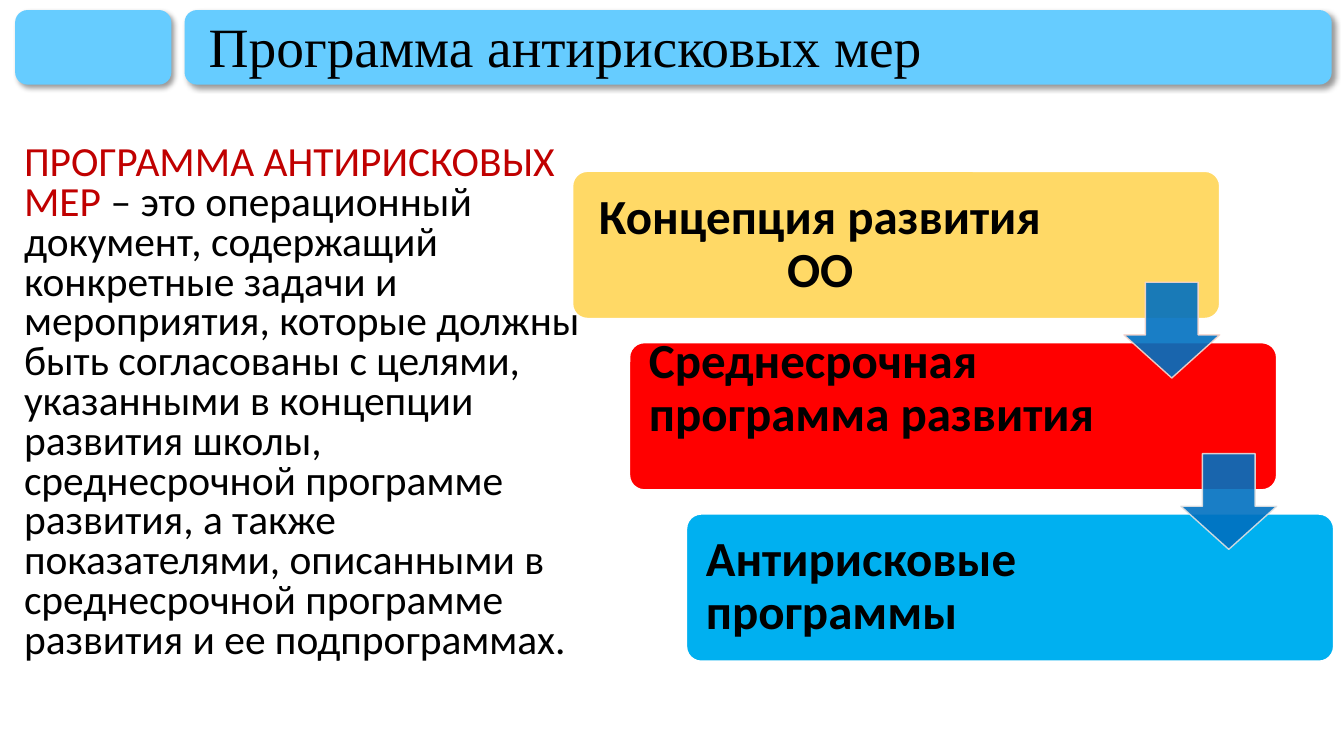
from dataclasses import dataclass

from lxml import etree
from pptx import Presentation
from pptx.dml.color import RGBColor
from pptx.enum.shapes import MSO_SHAPE
from pptx.enum.text import MSO_ANCHOR, MSO_AUTO_SIZE, PP_ALIGN
from pptx.oxml import parse_xml
from pptx.oxml.ns import nsdecls, qn
from pptx.util import Pt

ROUNDED = MSO_SHAPE.ROUNDED_RECTANGLE
DOWN_ARROW = MSO_SHAPE.DOWN_ARROW
LEFT, CENTER = PP_ALIGN.LEFT, PP_ALIGN.CENTER
TOP, MIDDLE = MSO_ANCHOR.TOP, MSO_ANCHOR.MIDDLE


@dataclass(frozen=True)
class Theme:
    header: str = "66CCFF"
    text: str = "000000"
    accent: str = "C00000"
    concept: str = "FFD966"
    program: str = "FF0000"
    antirisk: str = "00B0F0"
    card_line: str = "FFFFFF"
    arrow: str = "0070C0"
    arrow_lines: tuple = ("F8D7CE", "E1E1E1")
    title_font: str = "Times New Roman"
    body_font: str = "Calibri"
    title_size: float = 39.6
    body_size: float = 29.6
    card_size: float = 35


theme = Theme()


def add_block(kind, box, fill, line=None):
    """Add a filled preset shape without the default shadow."""
    shape = slide.shapes.add_shape(kind, *map(Pt, box))
    shape.shadow.inherit = False
    shape.fill.solid()
    shape.fill.fore_color.rgb = RGBColor.from_string(fill)
    if line:
        shape.line.color.rgb = RGBColor.from_string(line)
        shape.line.width = Pt(1)
    else:
        shape.line.fill.background()
    return shape


def write_text(shape, box, runs, size, font, spacing, anchor=MIDDLE, align=LEFT, bold=False):
    """Place a text shape and fill its paragraph with (text, colour) runs."""
    shape.left, shape.top, shape.width, shape.height = map(Pt, box)
    frame = shape.text_frame
    frame.word_wrap = True
    frame.auto_size = MSO_AUTO_SIZE.NONE
    frame.vertical_anchor = anchor
    paragraph = frame.paragraphs[0]
    paragraph.alignment = align
    paragraph.line_spacing = spacing
    for text, color in runs:
        run = paragraph.add_run()
        run.text = text
        run.font.size = Pt(size)
        run.font.name = font
        run.font.bold = bold
        run.font.color.rgb = RGBColor.from_string(color)


presentation = Presentation()
presentation.slide_width = Pt(960)
presentation.slide_height = Pt(540)
slide = presentation.slides.add_slide(presentation.slide_layouts[5])

# Header bars with a soft shadow
for left, width in ((131.8, 819.4), (10.8, 111.6)):
    bar = add_block(ROUNDED, (left, 7.2, width, 53.3), theme.header)
    effects = bar._element.spPr.find(qn("a:effectLst"))
    effects.append(parse_xml(
        f'<a:outerShdw {nsdecls("a")} blurRad="{Pt(4)}" dist="{Pt(3)}" dir="2700000" '
        'algn="tl" rotWithShape="0"><a:srgbClr val="000000">'
        '<a:alpha val="40000"/></a:srgbClr></a:outerShdw>'))

# Title, brought in front of the bars
title = slide.shapes.title
write_text(title, (141.8, 11.5, 799.2, 47.5), [("Программа антирисковых мер", theme.text)],
           theme.title_size, theme.title_font, 0.9)
slide.shapes._spTree.append(title._element)

# Definition
definition_box = (10.1, 100.1, 415.4, 421.2)
definition = slide.shapes.add_textbox(*map(Pt, definition_box))
write_text(definition, definition_box, [
    ("ПРОГРАММА АНТИРИСКОВЫХ МЕР ", theme.accent),
    ("– это операционный документ, содержащий конкретные задачи и мероприятия, "
     "которые должны быть согласованы с целями, указанными в концепции развития школы, "
     "среднесрочной программе развития, а также показателями, описанными в "
     "среднесрочной программе развития и ее подпрограммах.", theme.text),
], theme.body_size, theme.body_font, 0.8, anchor=TOP)

# Staircase of cards: text, fill, alignment, upward shift of the text
cards = (
    ("Концепция развития ОО", theme.concept, CENTER, 0),
    ("Среднесрочная программа развития", theme.program, LEFT, 19),
    ("Антирисковые программы", theme.antirisk, LEFT, 0),
)
card_left, card_top = 409, 122.4
step_x, step_y = 40.7, 122.4
for index, (text, fill, align, lift) in enumerate(cards):
    left, top = card_left + index * step_x, card_top + index * step_y
    card = add_block(ROUNDED, (left, top, 462.2, 105.1), fill, theme.card_line)
    card.adjustments[0] = 0.1
    label_box = (left + 3, top + 3.2 - lift, 347.8, 98.6)
    label = slide.shapes.add_textbox(*map(Pt, label_box))
    frame = label.text_frame
    frame.margin_left = frame.margin_right = Pt(10.8)
    frame.margin_top = frame.margin_bottom = Pt(10.8)
    write_text(label, label_box, [(text, theme.text)], theme.card_size,
               theme.body_font, 0.9, align=align, bold=True)

# Arrows between the cards, slightly transparent
for index, line in enumerate(theme.arrow_lines):
    left, top = card_left + 393.8 + index * step_x, card_top + 79.2 + index * step_y
    arrow = add_block(DOWN_ARROW, (left, top, 68.4, 68.4), theme.arrow, line)
    arrow.adjustments[0] = 0.55
    arrow.adjustments[1] = 0.45
    for color in arrow._element.spPr.iter(qn("a:srgbClr")):
        etree.SubElement(color, qn("a:alpha"), val="90000")

presentation.save("out.pptx")
